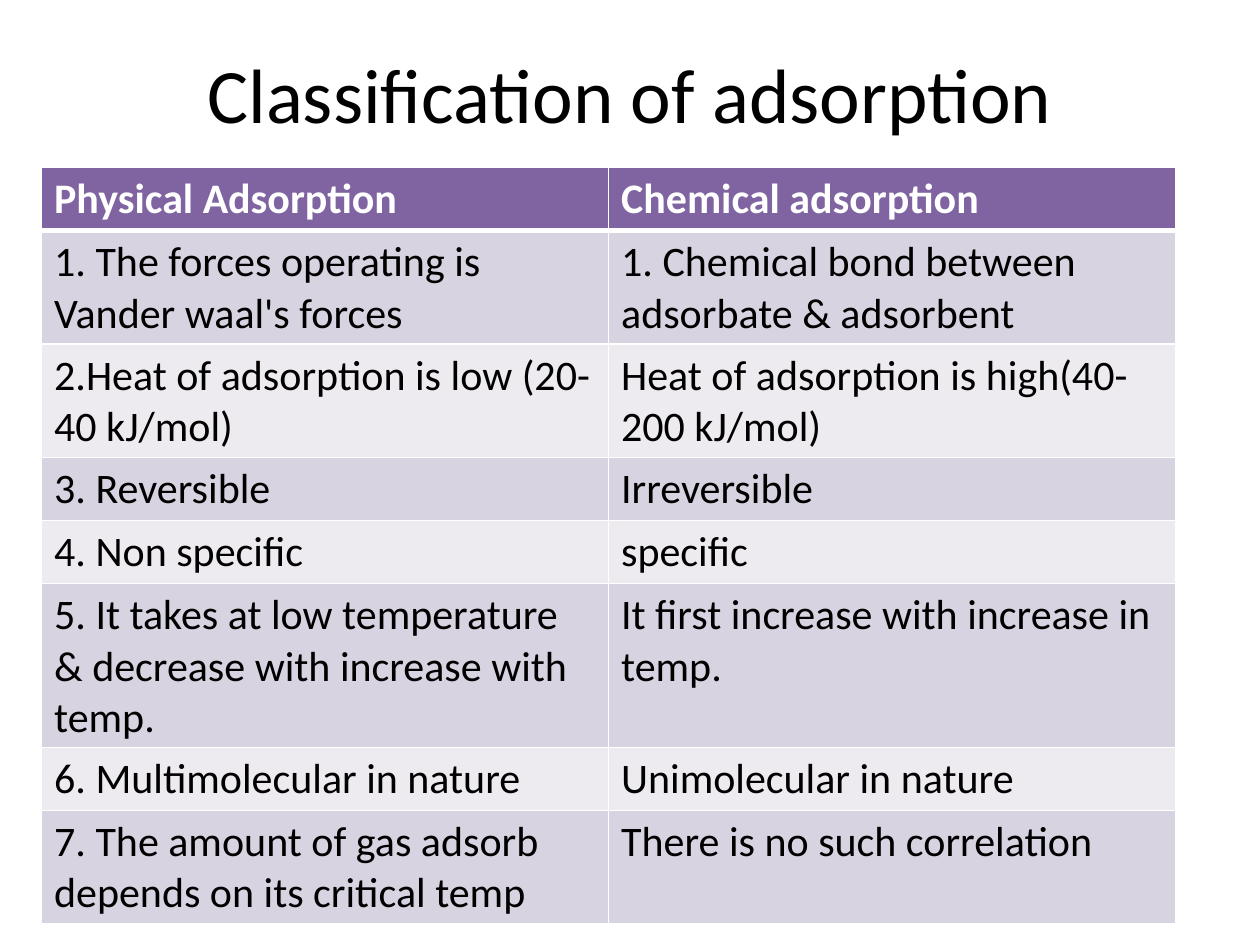
import pptx
import pptx.dml.color
import pptx.enum.text
import pptx.oxml
import pptx.util
from lxml import etree
from pptx.util import Inches

# Content
TITLE = "Classification of adsorption"
# Each row: physical text, chemical text, number of text lines
ROWS = [
    ("Physical Adsorption", "Chemical adsorption", 1),
    ("1. The forces operating is Vander waal's forces",
     "1. Chemical bond between adsorbate & adsorbent", 2),
    ("2.Heat of adsorption is low (20-40 kJ/mol)",
     "Heat of adsorption is high(40-200 kJ/mol)", 2),
    ("3. Reversible", "Irreversible", 1),
    ("4. Non specific", "specific", 1),
    ("5. It takes at low temperature & decrease with increase with temp.",
     "It first increase with increase in temp.", 3),
    ("6. Multimolecular in nature", "Unimolecular in nature", 1),
    ("7. The amount of gas adsorb depends on its critical temp",
     "There is no such correlation", 2),
]

# Style
FONT = "Calibri"
BLACK, WHITE = "000000", "FFFFFF"
HEADER_FILL = "8064A2"
BAND_FILLS = ("EDEAF0", "D8D3E0")
COLUMN_WIDTH = 4.5
LINE_HEIGHT, CELL_PADDING = 0.4, 0.1


def color(value):
    return pptx.dml.color.RGBColor.from_string(value)


def format_runs(paragraph, size, text_color, bold=False):
    for run in paragraph.runs:
        run.font.name = FONT
        run.font.size = pptx.util.Pt(size)
        run.font.bold = bold
        run.font.color.rgb = color(text_color)


def set_borders(cell, widths):
    """Draw white cell borders; widths maps each side to points."""
    properties = cell._tc.get_or_add_tcPr()
    for index, (side, width) in enumerate(widths.items()):
        line = etree.Element(pptx.oxml.ns.qn(f"a:ln{side}"),
                             w=str(pptx.util.Pt(width)))
        fill = etree.SubElement(line, pptx.oxml.ns.qn("a:solidFill"))
        etree.SubElement(fill, pptx.oxml.ns.qn("a:srgbClr"), val=WHITE)
        properties.insert(index, line)


def add_title(slide):
    shape = slide.shapes.add_textbox(Inches(0.5), Inches(0.3), Inches(9), Inches(0.87))
    text_frame = shape.text_frame
    text_frame.word_wrap = True
    text_frame.vertical_anchor = pptx.enum.text.MSO_ANCHOR.MIDDLE
    text_frame.text = TITLE
    paragraph = text_frame.paragraphs[0]
    paragraph.alignment = pptx.enum.text.PP_ALIGN.CENTER
    format_runs(paragraph, 44, BLACK)


def add_comparison(slide):
    heights = [CELL_PADDING + LINE_HEIGHT * lines for *_, lines in ROWS]
    table = slide.shapes.add_table(
        len(ROWS), 2, Inches(0.33), Inches(1.33),
        Inches(2 * COLUMN_WIDTH), Inches(sum(heights))).table
    for column in table.columns:
        column.width = Inches(COLUMN_WIDTH)

    for row_index, (*texts, _) in enumerate(ROWS):
        table.rows[row_index].height = Inches(heights[row_index])
        header = row_index == 0
        for column_index, text in enumerate(texts):
            cell = table.cell(row_index, column_index)
            cell.text_frame.text = text
            format_runs(cell.text_frame.paragraphs[0], 24,
                        WHITE if header else BLACK, bold=header)
            cell.fill.solid()
            cell.fill.fore_color.rgb = color(
                HEADER_FILL if header else BAND_FILLS[row_index % 2])
            set_borders(cell, {"L": 1, "R": 1,
                               "T": 3 if row_index == 1 else 1,
                               "B": 3 if header else 1})


def main():
    presentation = pptx.Presentation()
    presentation.slide_width = Inches(10)
    presentation.slide_height = Inches(7.5)
    slide = presentation.slides.add_slide(presentation.slide_layouts[6])
    add_title(slide)
    add_comparison(slide)
    presentation.save("out.pptx")


if __name__ == "__main__":
    main()
